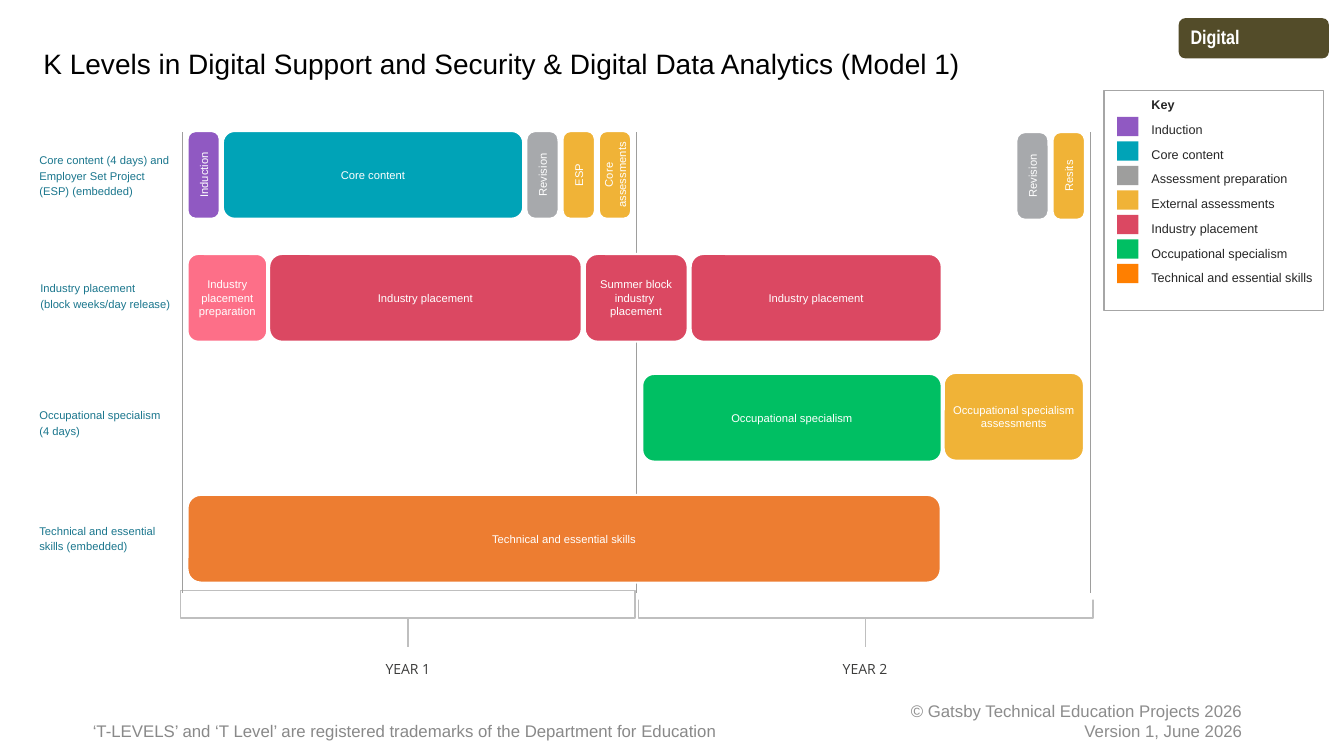
import pptx
import pptx.dml.color
import pptx.enum.shapes
import pptx.enum.text
import pptx.util
from pptx.util import Inches

SHAPE = pptx.enum.shapes.MSO_SHAPE
ALIGN = pptx.enum.text.PP_ALIGN
ANCHOR = pptx.enum.text.MSO_ANCHOR

# Content
TITLE = "K Levels in Digital Support and Security & Digital Data Analytics (Model 1)"
TRADEMARK = "‘T-LEVELS’ and ‘T Level’ are registered trademarks of the Department for Education"
COPYRIGHT = ["© Gatsby Technical Education Projects 2026", "Version 1, June 2026"]

PURPLE, TEAL, GREY, AMBER = "9059C2", "00A3B7", "A7A9AC", "F0B337"
PINK, RED, GREEN, ORANGE = "FD6F88", "DB4862", "00BF63", "ED7D31"
WHITE = "FFFFFF"

# Lane labels: left, top, width, height, paragraphs
LANE_LABELS = [
    (0.39, 1.5, 1.3, 0.47, ["Core content (4 days) and Employer Set Project (ESP) (embedded)"]),
    (0.4, 2.77, 1.36, 0.31, ["Industry placement", "(block weeks/day release)"]),
    (0.39, 4.03, 1.3, 0.31, ["Occupational specialism", "(4 days)"]),
    (0.39, 5.18, 1.3, 0.31, ["Technical and essential skills (embedded)"]),
]
# Bars: left, top, width, text, fill, corner, side inset
BAR_HEIGHT = 0.87
WIDE_BARS = [
    (2.21, 1.3, 2.98, "Core content", TEAL, 0.134, 0.1),
    (1.86, 2.52, 0.79, "Industry placement preparation", PINK, 0.134, 0),
    (2.67, 2.52, 3.1, "Industry placement", RED, 0.146, 0.1),
    (5.8, 2.52, 1.02, "Summer block industry \nplacement", RED, 0.146, 0),
    (6.85, 2.52, 2.49, "Industry placement", RED, 0.146, 0.1),
    (6.37, 3.71, 2.97, "Occupational specialism", GREEN, 0.134, 0.1),
    (9.36, 3.7, 1.39, "Occupational specialism assessments", AMBER, 0.137, 0.04),
    (1.86, 4.91, 7.47, "Technical and essential skills", ORANGE, 0.152, 0.1),
]
# Upright bars read upwards
UPRIGHT_WIDTH = 0.32
UPRIGHT_BARS = [
    (1.86, 1.3, "Induction", PURPLE, 0.249, 0.1),
    (5.22, 1.3, "Revision", GREY, 0.267, 0.1),
    (5.58, 1.3, "ESP", AMBER, 0.24, 0.04),
    (5.94, 1.3, "Core assessments", AMBER, 0.24, 0.04),
    (10.08, 1.31, "Revision", GREY, 0.267, 0.1),
    (10.44, 1.31, "Resits", AMBER, 0.24, 0.04),
]
KEY = [
    ("Induction", PURPLE), ("Core content", TEAL),
    ("Assessment preparation", "9E9E9D"), ("External assessments", AMBER),
    ("Industry placement", RED), ("Occupational specialism", GREEN),
    ("Technical and essential skills", "FF7F00"),
]
# Years: label, bracket left, label left, label width
YEARS = [("YEAR 1", 1.79, 3.74, 0.61), ("YEAR 2", 6.33, 8.25, 0.66)]
YEAR_EDGES = [6.31, 1.81, 10.82]

deck = pptx.Presentation()
deck.slide_width, deck.slide_height = Inches(13.33), Inches(7.5)
page = deck.slides.add_slide(deck.slide_layouts[5])


def colour(value):
    return pptx.dml.color.RGBColor.from_string(value)


def write(shape, paragraphs, size, ink, font="Arial", align=ALIGN.LEFT, bold=False,
          anchor=ANCHOR.TOP, insets=(0, 0), spacing=None, before=0):
    frame = shape.text_frame
    frame.word_wrap = True
    frame.vertical_anchor = anchor
    frame.margin_left = frame.margin_right = Inches(insets[0])
    frame.margin_top = frame.margin_bottom = Inches(insets[1])
    for index, text in enumerate(paragraphs):
        para = frame.add_paragraph() if index else frame.paragraphs[0]
        para.alignment = align
        if spacing:
            para.line_spacing = spacing
        if index and before:
            para.space_before = pptx.util.Pt(before)
        for part, line in enumerate(text.split("\n")):
            if part:
                para.add_line_break()
            span = para.add_run()
            span.text = line
            span.font.name = font
            span.font.size = pptx.util.Pt(size)
            span.font.bold = bold
            span.font.color.rgb = colour(ink)


def add_text(left, top, width, height, paragraphs, size, ink, **options):
    box = page.shapes.add_textbox(*map(Inches, (left, top, width, height)))
    write(box, paragraphs, size, ink, **options)


def add_block(kind, left, top, width, height, fill=None, line=None, weight=1):
    block = page.shapes.add_shape(kind, *map(Inches, (left, top, width, height)))
    block.shadow.inherit = False
    if fill:
        block.fill.solid()
        block.fill.fore_color.rgb = colour(fill)
    else:
        block.fill.background()
    if line:
        block.line.color.rgb = colour(line)
        block.line.width = pptx.util.Pt(weight)
    else:
        block.line.fill.background()
    return block


def add_rule(x, top, bottom, ink, weight):
    rule = page.shapes.add_connector(pptx.enum.shapes.MSO_CONNECTOR.STRAIGHT,
                                     Inches(x), Inches(top), Inches(x), Inches(bottom))
    rule.line.color.rgb = colour(ink)
    rule.line.width = pptx.util.Pt(weight)
    properties = rule._element.spPr
    properties.append(properties.makeelement(pptx.oxml.ns.qn("a:effectLst"), {}))
    return rule


def add_bar(left, top, width, height, text, fill, corner, inset):
    bar = add_block(SHAPE.ROUNDED_RECTANGLE, left, top, width, height, fill, WHITE, 1.5)
    bar.adjustments[0] = corner
    write(bar, [text], 8, WHITE, align=ALIGN.CENTER, anchor=ANCHOR.MIDDLE, insets=(inset, 0.05))
    return bar


# Year brackets; the mask opens the top of the second one
brackets = [add_block(SHAPE.RECTANGLE, left, 5.86, 4.51, 0.27, line="BFBFBF")
            for _, left, _, _ in YEARS]
add_block(SHAPE.RECTANGLE, 6.31, 5.78, 4.57, 0.17, WHITE)
for bracket, (label, left, label_left, label_width) in zip(brackets, YEARS):
    stem = add_rule(left + 4.51 / 2, 6.13, 6.42, "BFBFBF", 1)
    stem.begin_connect(bracket, 2)
    add_text(label_left, 6.55, label_width, 0.14, [label], 10, "3C3C3B",
             font="Open Sans", align=ALIGN.CENTER, spacing=1.02)
for x in YEAR_EDGES:
    add_rule(x, 1.31, 5.88, "9E9E9D", 0.75)

# Title, badge and footer
title = page.shapes.title
title.left, title.top, title.width, title.height = map(Inches, (0.33, 0.41, 9.87, 0.44))
write(title, [TITLE], 20, "000000", insets=(0.1, 0.05))
title.text_frame.auto_size = pptx.enum.text.MSO_AUTO_SIZE.NONE
badge = add_block(SHAPE.ROUNDED_RECTANGLE, 11.69, 0.18, 1.49, 0.4, "534C29")
write(badge, ["Digital"], 14, WHITE, font="Arial Narrow", bold=True, insets=(0.1, 0.05))
add_text(8.83, 6.95, 3.59, 0.4, COPYRIGHT, 12, "8C8C8C", align=ALIGN.RIGHT,
         anchor=ANCHOR.MIDDLE, insets=(0.1, 0.05))
add_text(0.92, 7.15, 6.81, 0.2, [TRADEMARK], 12, "898989")

# Lanes
for left, top, width, height, lines in LANE_LABELS:
    add_text(left, top, width, height, lines, 8, "1A768D", spacing=1.16)
for left, top, width, *style in WIDE_BARS:
    add_bar(left, top, width, BAR_HEIGHT, *style)
turn = (BAR_HEIGHT - UPRIGHT_WIDTH) / 2
for left, top, *style in UPRIGHT_BARS:
    add_bar(left - turn, top + turn, BAR_HEIGHT, UPRIGHT_WIDTH, *style).rotation = 270

# Key
panel = add_block(SHAPE.RECTANGLE, 10.95, 0.9, 2.18, 2.18, line="A6A6A6")
write(panel, ["Key"] + [name for name, _ in KEY], 9, "262626",
      insets=(0.1, 0.05), spacing=1.08, before=6)
panel.text_frame.margin_left = Inches(0.47)
panel.text_frame.paragraphs[0].runs[0].font.bold = True
for row, (_, fill) in enumerate(KEY):
    add_block(SHAPE.RECTANGLE, 11.08, 1.16 + row * 0.243, 0.21, 0.19, fill)

deck.save("out.pptx")
